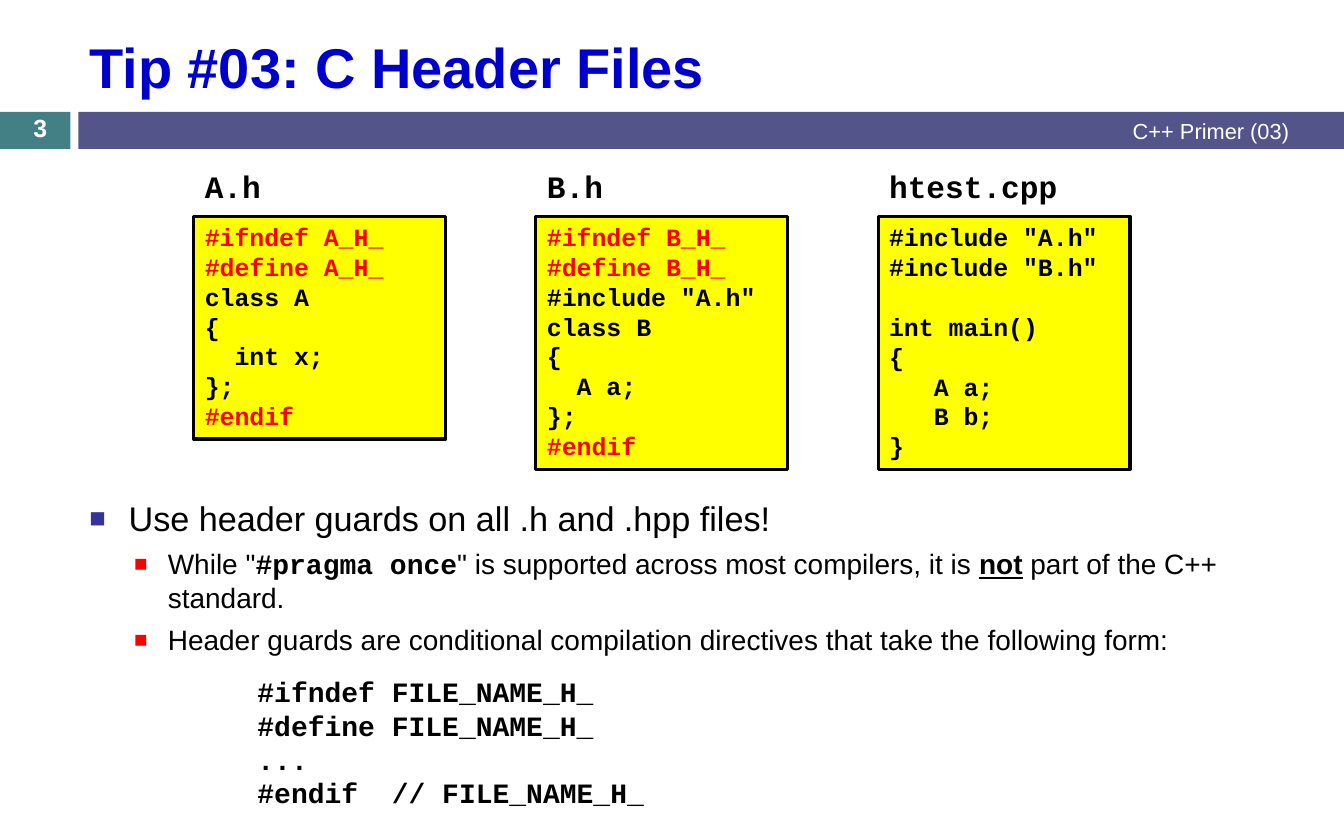
import pptx
import pptx.util
import pptx.dml.color
import pptx.enum.shapes
import pptx.enum.text
import pptx.oxml.ns
from lxml import etree

Inches, Pt = pptx.util.Inches, pptx.util.Pt
ALIGN, ANCHOR = pptx.enum.text.PP_ALIGN, pptx.enum.text.MSO_ANCHOR

# Content
COLORS = {"teal": "438086", "violet": "53548A", "title": "0000CC", "black": "000000",
          "white": "FFFFFF", "yellow": "FFFF00", "red": "FF0000", "navy": "333399"}
SANS, MONO = "Arial", "Courier New"
TITLE, COURSE, PAGE = "Tip #03: C Header Files", "C++ Primer (03)", "3"

FILES = [
    ("A.h", ["#ifndef A_H_", "#define A_H_", "class A", "{", "  int x;", "};", "#endif"]),
    ("B.h", ["#ifndef B_H_", "#define B_H_", '#include "A.h"', "class B", "{", "  A a;",
             "};", "#endif"]),
    ("htest.cpp", ['#include "A.h"', '#include "B.h"', "", "int main()", "{", "   A a;",
                   "   B b;", "}"]),
]
GUARDS = ("#ifndef", "#define", "#endif")

# Each body paragraph: style, then runs of (text, kind)
BODY = [
    ("main", [("Use header guards on all .h and .hpp files!", "plain")]),
    ("sub", [('While "', "plain"), ("#pragma once", "code"),
             ('" is supported across most compilers, it is ', "plain"), ("not", "stress"),
             (" part of the C++ standard.", "plain")]),
    ("sub", [("Header guards are conditional compilation directives that take the "
              "following form:", "plain")]),
    ("first code", [("#ifndef FILE_NAME_H_", "code")]),
    ("code", [("#define FILE_NAME_H_", "code")]),
    ("code", [("...", "code")]),
    ("code", [("#endif  // FILE_NAME_H_", "code")]),
]
# Style: level, size, left margin, hanging indent, space before, bullet colour
STYLES = {
    "main": (0, 22, 0.35, -0.35, 7, "navy"),
    "sub": (1, 18, 0.7, -0.3, 5.5, "red"),
    "first code": (1, 18, 1.5, 0, 12, None),
    "code": (1, 18, 1.5, 0, 0, None),
}

# Layout, in inches
WIDTH, HEIGHT = 12, 7.5
MARGIN, CONTENT_WIDTH = 0.7, 10.91
BAND_TOP, BAND_HEIGHT = 1, 0.33
FILE_LEFT, FILE_STEP, FILE_WIDTH = 1.73, 3.055, 2.25
LABEL_TOP, LABEL_HEIGHT, CODE_TOP = 1.45, 0.44, 1.93
CODE_SIZE, CODE_LINE, PADDING = 16, 0.27, 0.1


def color(name):
    return pptx.dml.color.RGBColor.from_string(COLORS[name])


def add_run(paragraph, text, size, font=SANS, ink="black", bold=False, underline=False):
    run = paragraph.add_run()
    run.text = text
    run.font.size, run.font.name = Pt(size), font
    run.font.bold, run.font.underline = bold, underline
    run.font.color.rgb = color(ink)


def add_box(shapes, left, top, width, height, fill, line=None):
    shape = shapes.add_shape(pptx.enum.shapes.MSO_SHAPE.RECTANGLE, Inches(left),
                             Inches(top), Inches(width), Inches(height))
    shape.shadow.inherit = False
    shape.fill.solid()
    shape.fill.fore_color.rgb = color(fill)
    if line:
        shape.line.color.rgb = color(line)
        shape.line.width = Pt(2)
    else:
        shape.line.fill.background()
    return shape


def add_text(shapes, left, top, width, height, anchor=ANCHOR.TOP, align=ALIGN.LEFT, wrap=True):
    frame = shapes.add_textbox(Inches(left), Inches(top), Inches(width),
                               Inches(height)).text_frame
    frame.word_wrap, frame.vertical_anchor = wrap, anchor
    frame.paragraphs[0].alignment = align
    return frame


def next_paragraph(frame, index):
    return frame.add_paragraph() if index else frame.paragraphs[0]


def format_paragraph(paragraph, level, left, indent, before, bullet):
    paragraph.level, paragraph.space_before = level, Pt(before)
    properties = paragraph._p.get_or_add_pPr()
    properties.set("marL", str(Inches(left)))
    properties.set("indent", str(Inches(indent)))

    def child(parent, tag, **attributes):
        return etree.SubElement(parent, pptx.oxml.ns.qn(tag), **attributes)

    if bullet:
        child(child(properties, "a:buClr"), "a:srgbClr", val=COLORS[bullet])
        child(properties, "a:buSzPct", val="80000")
        child(properties, "a:buFont", typeface=SANS)
        child(properties, "a:buChar", char="■")
    else:
        child(properties, "a:buNone")


def add_file(slide, column, name, lines):
    shapes = slide.shapes.add_group_shape().shapes
    left = FILE_LEFT + column * FILE_STEP
    box = add_box(shapes, left, CODE_TOP, FILE_WIDTH, len(lines) * CODE_LINE + PADDING,
                  "yellow", "black")
    frame = box.text_frame
    frame.word_wrap, frame.vertical_anchor = True, ANCHOR.TOP
    gap = 0
    index = 0
    for line in lines:
        if not line:
            gap = CODE_LINE * 72
            continue
        paragraph = next_paragraph(frame, index)
        paragraph.alignment, paragraph.space_before = ALIGN.LEFT, Pt(gap)
        add_run(paragraph, line, CODE_SIZE, MONO,
                "red" if line.startswith(GUARDS) else "black", True)
        gap = 0
        index += 1
    label = add_text(shapes, left, LABEL_TOP, len(name) * 0.17 + 0.2, LABEL_HEIGHT, wrap=False)
    add_run(label.paragraphs[0], name, 20, MONO, bold=True)


def main():
    presentation = pptx.Presentation()
    presentation.slide_width, presentation.slide_height = Inches(WIDTH), Inches(HEIGHT)
    slide = presentation.slides.add_slide(presentation.slide_layouts[6])
    shapes = slide.shapes

    # Header band and title
    add_box(shapes, 0, BAND_TOP, 0.63, BAND_HEIGHT, "teal")
    add_box(shapes, MARGIN, BAND_TOP, WIDTH - MARGIN, BAND_HEIGHT, "violet")
    title = add_text(shapes, MARGIN, 0.19, CONTENT_WIDTH, 0.8, ANCHOR.MIDDLE)
    add_run(title.paragraphs[0], TITLE, 36, ink="title", bold=True)

    # Guidance text
    body = add_text(shapes, MARGIN, 4.39, CONTENT_WIDTH, 2.99)
    for index, (style, runs) in enumerate(BODY):
        level, size, left, indent, before, bullet = STYLES[style]
        paragraph = next_paragraph(body, index)
        format_paragraph(paragraph, level, left, indent, before, bullet)
        for text, kind in runs:
            add_run(paragraph, text, size, MONO if kind == "code" else SANS,
                    bold=kind != "plain", underline=kind == "stress")

    # Course name and page number
    course = add_text(shapes, 4.5, 0.99, 7.11, 0.35, ANCHOR.MIDDLE, ALIGN.RIGHT)
    add_run(course.paragraphs[0], COURSE, 14, ink="white")
    page = add_text(shapes, 0, 0.99, 0.72, 0.3, ANCHOR.MIDDLE, ALIGN.CENTER)
    add_run(page.paragraphs[0], PAGE, 16, ink="white", bold=True)

    # Source files
    for column, (name, lines) in enumerate(FILES):
        add_file(slide, column, name, lines)

    presentation.save("out.pptx")


if __name__ == "__main__":
    main()
